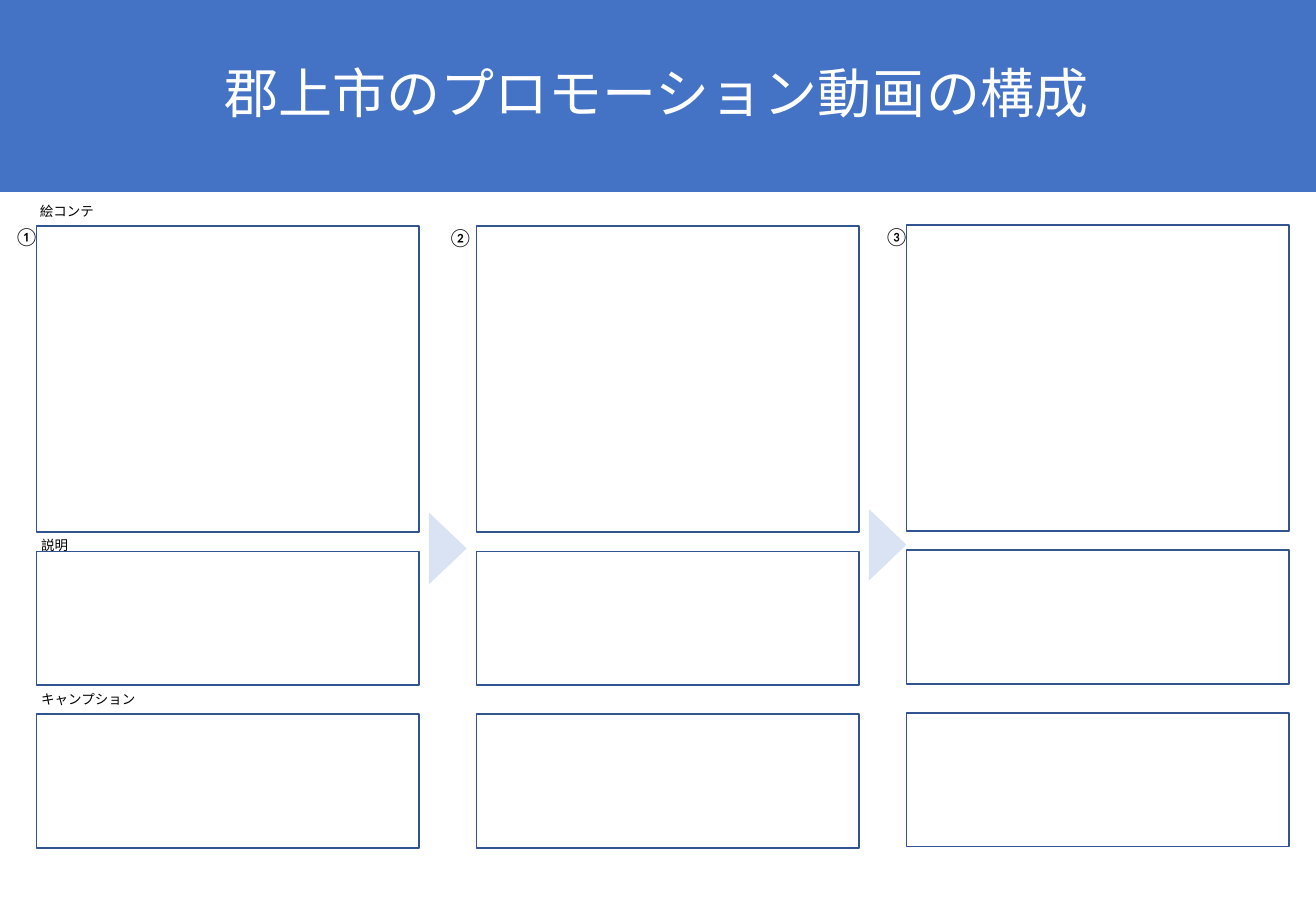
from lxml import etree
from pptx import Presentation
from pptx import util as u
from pptx.dml.color import RGBColor
from pptx.enum import shapes, text
from pptx.oxml.ns import qn

BLUE = RGBColor(0x44, 0x72, 0xC4)
NAVY = RGBColor(0x32, 0x54, 0x91)
PALE = RGBColor(0xDA, 0xE3, 0xF3)
WHITE = RGBColor(0xFF, 0xFF, 0xFF)
BLACK = RGBColor(0, 0, 0)
JP = "Noto Sans CJK JP"


def write(sp, words, font, size, color):
    p = sp.text_frame.paragraphs[0]
    r = p.add_run()
    r.text = words
    r.font.color.rgb = color
    for name, value in {"name": font, "size": u.Pt(size), "bold": False}.items():
        setattr(r.font, name, value)
    etree.SubElement(r._r.get_or_add_rPr(), qn("a:ea")).set("typeface", font)
    return p


def box(x, y, w, h):
    return [u.Inches(v) for v in (x, y, w, h)]


prs = Presentation()
prs.slide_width, prs.slide_height = u.Inches(10.83), u.Inches(7.5)
s = prs.slides.add_slide(prs.slide_layouts[5])

title = s.shapes.title
title.left, title.top, title.width, title.height = box(-0.02, 0, 10.85, 1.58)
title.fill.solid()
title.fill.fore_color.rgb = BLUE
title.text_frame.vertical_anchor = text.MSO_ANCHOR.MIDDLE
p = write(title, "郡上市のプロモーション動画の構成", JP, 32, WHITE)
for name, value in {"alignment": text.PP_ALIGN.CENTER, "line_spacing": 0.9}.items():
    setattr(p, name, value)

columns = [(0.3, 1.86), (3.92, 1.86), (7.46, 1.85)]
rows = [(0, 2.52), (2.68, 1.1), (4.02, 1.1)]
for x, top in columns:
    for offset, h in rows:
        sp = s.shapes.add_shape(shapes.MSO_SHAPE.RECTANGLE, *box(x, top + offset, 3.15, h))
        sp.shadow.inherit = False
        sp.fill.background()
        sp.line.color.rgb = NAVY
        sp.line.width = u.Pt(1)

for x, y in [(3.39, 4.36), (7.01, 4.33)]:
    sp = s.shapes.add_shape(shapes.MSO_SHAPE.ISOSCELES_TRIANGLE, *box(x, y, 0.59, 0.31))
    sp.shadow.inherit = False
    sp.rotation = 90
    sp.fill.solid()
    sp.fill.fore_color.rgb = PALE
    sp.line.fill.background()

labels = [
    ("絵コンテ", 0.23, 1.62, 1.02, 0.24, JP, 8),
    ("説明", 0.24, 4.37, 1.02, 0.24, JP, 8),
    ("キャンプション", 0.24, 5.64, 1.32, 0.24, JP, 8),
    ("①", 0.02, 1.8, 0.39, 0.29, "Calibri", 11),
    ("②", 3.59, 1.81, 0.39, 0.29, "Calibri", 11),
    ("③", 7.18, 1.8, 0.39, 0.29, "Calibri", 11),
]
for words, x, y, w, h, font, size in labels:
    sp = s.shapes.add_textbox(*box(x, y, w, h))
    sp.text_frame.word_wrap = True
    write(sp, words, font, size, BLACK)

prs.save("out.pptx")
